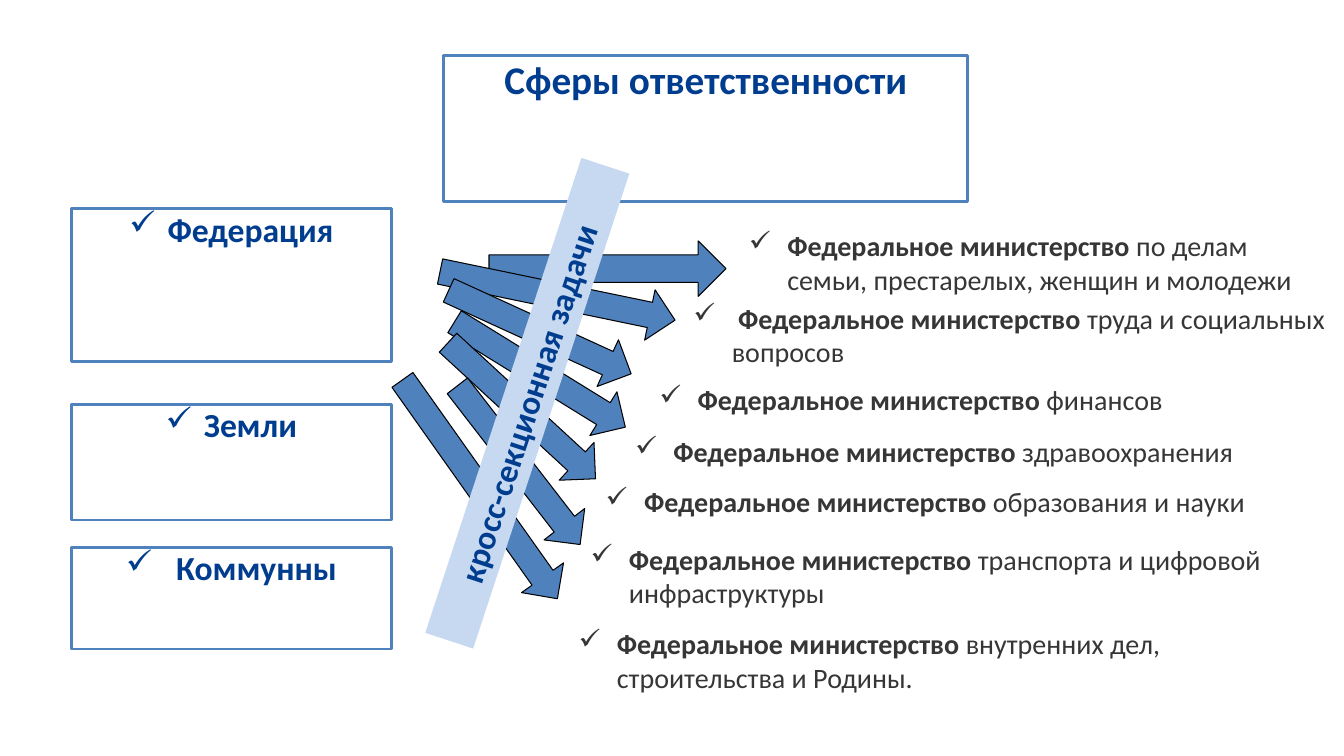
from typing import NamedTuple

from lxml import etree
from pptx import Presentation
from pptx import util as u
from pptx.dml.color import RGBColor
from pptx.enum import shapes, text
from pptx.oxml.ns import qn

NAVY, BLUE, PALE, GREY = "003D8F", "4F81BD", "C6D9F1", "363636"
WHITE, BLACK = "FFFFFF", "000000"
FONT = "Calibri"
MINISTRY = "Федеральное министерство"


class Level(NamedTuple):
    name: str
    top: float
    height: float
    indent: float


class Ministry(NamedTuple):
    left: float
    top: float
    width: float
    height: float
    duty: str
    lead: str = ""


class Arrow(NamedTuple):
    left: float
    top: float
    width: float
    height: float
    angle: float


LEVELS = [
    Level("Федерация", 2.07, 1.52, 0.38),
    Level("Земли", 4.01, 1.15, 0.38),
    Level("Коммунны", 5.43, 1.01, 0.5),
]
MINISTRIES = [
    Ministry(7.33, 2.22, 5.85, 0.77, "по делам семьи, престарелых, женщин и молодежи"),
    Ministry(6.78, 2.94, 6.63, 0.77, "труда и социальных вопросов", lead=" "),
    Ministry(6.44, 3.75, 6.75, 0.44, "финансов"),
    Ministry(6.2, 4.26, 6.43, 0.44, "здравоохранения"),
    Ministry(5.91, 4.76, 7.07, 0.44, "образования и науки"),
    Ministry(5.76, 5.33, 7.42, 0.77, "транспорта и цифровой инфраструктуры"),
    Ministry(5.64, 6.17, 6.84, 0.77, "внутренних дел, строительства и Родины."),
]
ARROWS = [
    Arrow(4.85, 2.39, 2.35, 0.55, 0),
    Arrow(4.34, 2.68, 2.38, 0.51, 11.7),
    Arrow(4.36, 3.04, 1.99, 0.51, 24.6),
    Arrow(4.36, 3.46, 1.99, 0.51, 31.7),
    Arrow(4.18, 3.82, 1.99, 0.51, 42.7),
    Arrow(4.15, 4.36, 1.99, 0.51, 52.3),
    Arrow(3.43, 4.6, 2.66, 0.51, 54.7),
]


def color(hex_code: str) -> RGBColor:
    return RGBColor.from_string(hex_code)


def add_check_bullet(paragraph, indent: float) -> None:
    """Hang a check mark to the left of the paragraph."""
    props = paragraph._p.get_or_add_pPr()
    props.set("marL", str(u.Inches(indent)))
    props.set("indent", str(-u.Inches(indent)))
    etree.SubElement(props, qn("a:buChar")).set("char", "✓")


def write(shape, *runs: tuple[str, bool], size: int, hex_code: str = NAVY,
          centred: bool = True, indent: float = 0, inset: float | None = None) -> None:
    """Fill the shape with one paragraph of (wording, bold) runs."""
    frame = shape.text_frame
    frame.word_wrap = True
    frame.vertical_anchor = text.MSO_ANCHOR.TOP
    if inset is not None:
        frame.margin_left = frame.margin_right = u.Inches(inset)
        frame.margin_top = frame.margin_bottom = u.Inches(inset)
    paragraph = frame.paragraphs[0]
    paragraph.alignment = text.PP_ALIGN.CENTER if centred else text.PP_ALIGN.LEFT
    if indent:
        add_check_bullet(paragraph, indent)
    for wording, bold in runs:
        run = paragraph.add_run()
        run.text = wording
        run.font.name = FONT
        run.font.size = u.Pt(size)
        run.font.bold = bold
        run.font.color.rgb = color(hex_code)


def add_block(slide, kind, left: float, top: float, width: float, height: float,
              fill: str, line: str | None = None, weight: float = 2, angle: float = 0):
    block = slide.shapes.add_shape(kind, *map(u.Inches, (left, top, width, height)))
    block.shadow.inherit = False
    block.rotation = angle
    block.fill.solid()
    block.fill.fore_color.rgb = color(fill)
    if line:
        block.line.color.rgb = color(line)
        block.line.width = u.Pt(weight)
    else:
        block.line.fill.background()
    return block


def add_ministry(slide, ministry: Ministry) -> None:
    box = slide.shapes.add_textbox(*map(u.Inches, ministry[:4]))
    write(box, (f"{ministry.lead}{MINISTRY} ", True), (ministry.duty, False),
          size=20, hex_code=GREY, centred=False, indent=0.38)
    box.text_frame.auto_size = text.MSO_AUTO_SIZE.SHAPE_TO_FIT_TEXT


def main() -> None:
    deck = Presentation()
    deck.slide_width, deck.slide_height = u.Inches(13.33), u.Inches(7.5)
    slide = deck.slides.add_slide(deck.slide_layouts[6])
    rectangle = shapes.MSO_SHAPE.RECTANGLE

    title = add_block(slide, rectangle, 4.4, 0.55, 5.2, 1.45, WHITE, BLUE)
    write(title, ("Сферы ответственности", True), size=28, inset=0)
    for level in LEVELS:
        level_box = add_block(slide, rectangle, 0.71, level.top, 3.17, level.height,
                              WHITE, BLUE)
        write(level_box, (level.name, True), size=24, indent=level.indent, inset=0)
    for ministry in MINISTRIES:
        add_ministry(slide, ministry)
    for arrow in ARROWS:
        add_block(slide, shapes.MSO_SHAPE.RIGHT_ARROW, *arrow[:4], fill=BLUE,
                  line=BLACK, weight=0.75, angle=arrow.angle)
    cross_task = add_block(slide, rectangle, 2.75, 3.75, 4.96, 0.5, PALE, angle=288.2)
    write(cross_task, ("кросс-секционная задачи", True), size=24)

    deck.save("out.pptx")


if __name__ == "__main__":
    main()
